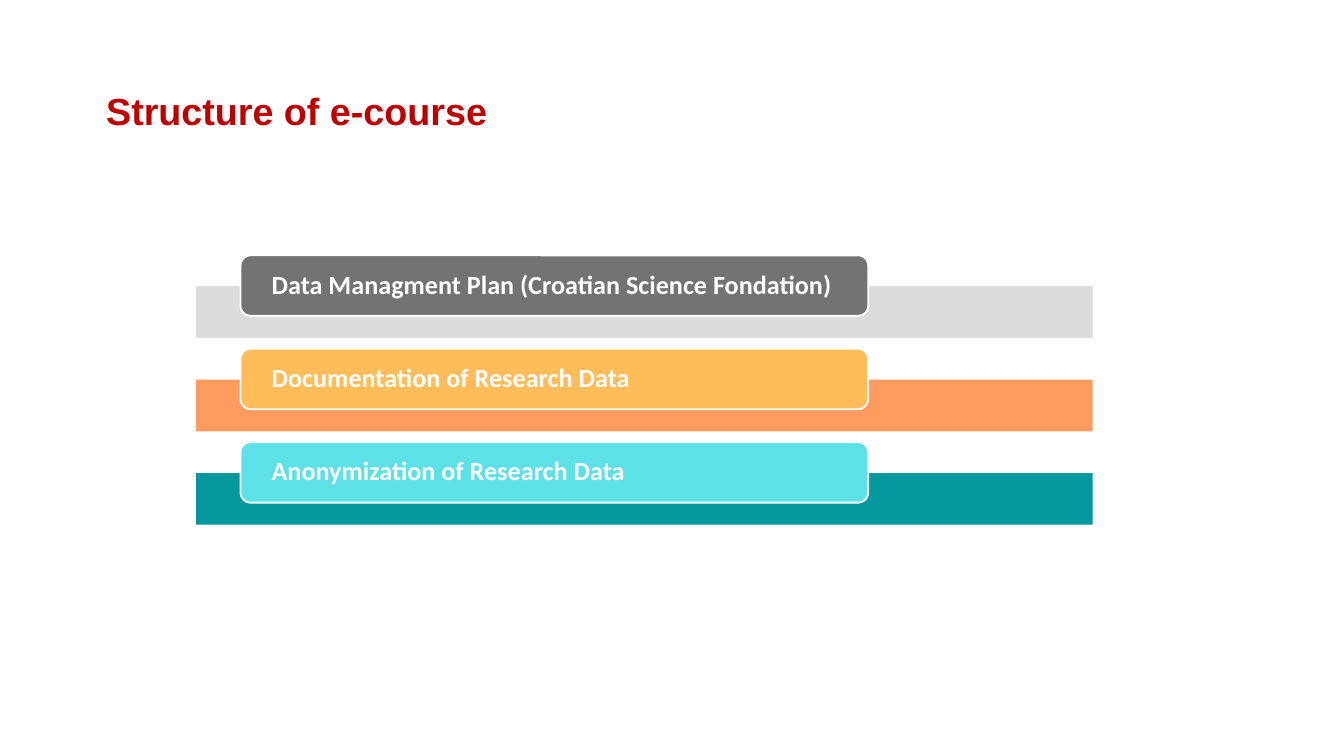
import dataclasses

import pptx
import pptx.dml.color
import pptx.enum.shapes
import pptx.enum.text
import pptx.oxml
import pptx.oxml.ns
import pptx.util

EMU_PER_PX = 4572  # 200 px to the inch
SHAPE = pptx.enum.shapes.MSO_SHAPE


@dataclasses.dataclass(frozen=True)
class Theme:
    title_color: str = "C00000"
    light: str = "FFFFFF"
    title_font: str = "Arial"
    label_font: str = "Calibri"
    title_size: float = 20.2
    label_size: float = 14
    outline: float = 1


def px(length):
    return pptx.util.Emu(length * EMU_PER_PX)


def rgb(color):
    return pptx.dml.color.RGBColor.from_string(color)


def apply(target, formats):
    for name, value in formats.items():
        setattr(target, name, value)


class Deck:
    def __init__(self, theme, width, height):
        self.theme = theme
        self.presentation = pptx.Presentation()
        apply(self.presentation, {"slide_width": px(width), "slide_height": px(height)})
        self.slide = None

    def add_slide(self):
        self.slide = self.presentation.slides.add_slide(self.presentation.slide_layouts[5])

    def set_text(self, frame, text, inset, font, size, color):
        """Fill a text frame with one bold, left-aligned, vertically centred line."""
        apply(frame, {
            "text": text,
            "word_wrap": True,
            "auto_size": pptx.enum.text.MSO_AUTO_SIZE.NONE,
            "vertical_anchor": pptx.enum.text.MSO_ANCHOR.MIDDLE,
            "margin_left": px(inset),
            "margin_right": px(inset),
            "margin_top": 0,
            "margin_bottom": 0,
        })
        line = frame.paragraphs[0]
        apply(line, {"alignment": pptx.enum.text.PP_ALIGN.LEFT, "line_spacing": 0.9})
        apply(line.runs[0].font, {"name": font, "size": pptx.util.Pt(size), "bold": True})
        line.runs[0].font.color.rgb = rgb(color)

    def title(self, text, left, top, width, height):
        heading = self.slide.shapes.title
        apply(heading, {"left": px(left), "top": px(top),
                        "width": px(width), "height": px(height)})
        self.set_text(heading.text_frame, text, 20, self.theme.title_font,
                      self.theme.title_size, self.theme.title_color)

    def block(self, kind, color, left, top, width, height):
        block = self.slide.shapes.add_shape(kind, px(left), px(top), px(width), px(height))
        block.shadow.inherit = False
        block.fill.solid()
        block.fill.fore_color.rgb = rgb(color)
        return block

    def band(self, color, opacity, left, top, width, height):
        band = self.block(SHAPE.RECTANGLE, color, left, top, width, height)
        band.line.fill.background()
        if opacity < 100:
            tint = band.element.spPr.find(".//" + pptx.oxml.ns.qn("a:srgbClr"))
            tint.append(pptx.oxml.parse_xml(
                f'<a:alpha {pptx.oxml.ns.nsdecls("a")} val="{opacity * 1000}"/>'))

    def label(self, text, color, left, top, width, height):
        label = self.block(SHAPE.ROUNDED_RECTANGLE, color, left, top, width, height)
        label.line.color.rgb = rgb(self.theme.light)
        label.line.width = pptx.util.Pt(self.theme.outline)
        self.set_text(label.text_frame, text, 42, self.theme.label_font,
                      self.theme.label_size, self.theme.light)


def main():
    modules = [
        ("Data Managment Plan (Croatian Science Fondation)", "737373", "D9D9D9", 90),
        ("Documentation of Research Data", "FFBD59", "FF914D", 90),
        ("Anonymization of Research Data", "5CE1E6", "03989E", 100),
    ]
    first_top, pitch, band_drop = 380, 139, 46

    deck = Deck(Theme(), 2000, 1125)
    deck.add_slide()
    deck.title("Structure of e-course", 138, 60, 1724, 218)
    for index, (name, label_color, band_color, opacity) in enumerate(modules):
        top = first_top + index * pitch
        deck.band(band_color, opacity, 292, top + band_drop, 1334, 77)
        deck.label(name, label_color, 358, top, 934, 90)
    deck.presentation.save("out.pptx")


if __name__ == "__main__":
    main()
